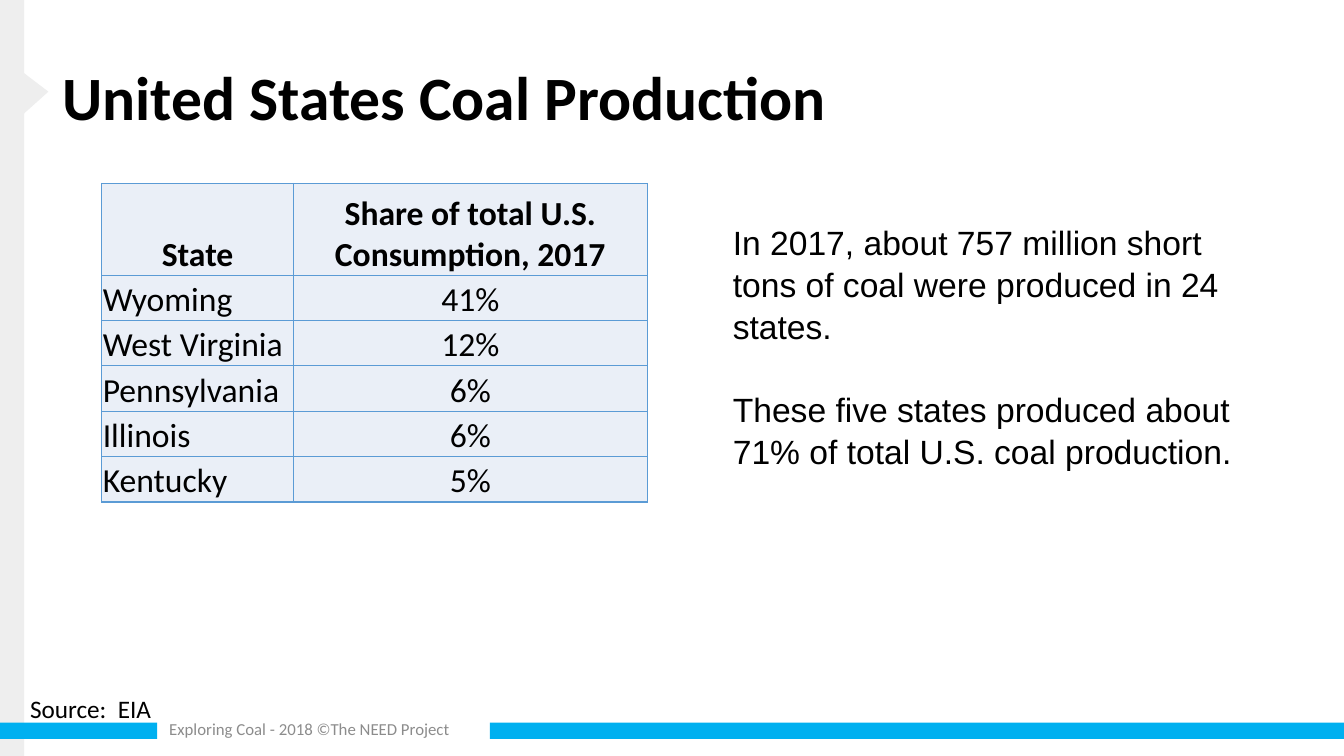
from dataclasses import dataclass

from lxml import etree
from pptx import Presentation
from pptx.dml.color import RGBColor
from pptx.enum.shapes import MSO_SHAPE
from pptx.enum.text import MSO_ANCHOR, MSO_AUTO_SIZE, PP_ALIGN
from pptx.oxml.ns import qn
from pptx.util import Emu, Pt

RECT = MSO_SHAPE.RECTANGLE
TOP, MIDDLE, BOTTOM = MSO_ANCHOR.TOP, MSO_ANCHOR.MIDDLE, MSO_ANCHOR.BOTTOM
LEFT, CENTER = PP_ALIGN.LEFT, PP_ALIGN.CENTER
FIXED = MSO_AUTO_SIZE.NONE
SCALE = 9144


@dataclass(frozen=True)
class Theme:
    black: str = "000000"
    gray: str = "8C8C8C"
    pale: str = "EEEEEE"
    blue: str = "00B0F0"
    cell: str = "EAEFF7"
    edge: str = "5B9BD5"
    sans: str = "Calibri"
    prose: str = "Arial"
    title: int = 44
    body: int = 24
    source: int = 18
    footer: int = 12
    gap: int = 29


THEME = Theme()


@dataclass(frozen=True)
class Box:
    x: int
    y: int
    w: int
    h: int

    def emu(self) -> tuple[Emu, Emu, Emu, Emu]:
        return px(self.x), px(self.y), px(self.w), px(self.h)


@dataclass(frozen=True)
class Bar:
    box: Box
    color: str


@dataclass(frozen=True)
class Style:
    size: int
    font: str = THEME.sans
    color: str = THEME.black
    bold: bool = False
    align: PP_ALIGN = LEFT
    line: float = 1.0


@dataclass(frozen=True)
class Note:
    box: Box
    lines: tuple[str, ...]
    style: Style
    anchor: MSO_ANCHOR = TOP
    wrap: bool = True


BARS = (
    Bar(Box(0, 0, 24, 750), THEME.pale),
    Bar(Box(0, 717, 156, 16), THEME.blue),
    Bar(Box(486, 717, 847, 16), THEME.blue),
)
ARROW = ((10, 62), (48, 91), (10, 125))
NOTES = (
    Note(Box(20, 683, 162, 40), ("Source:  EIA",), Style(THEME.source), wrap=False),
    Note(
        Box(158, 703, 328, 40),
        ("Exploring Coal - 2018 ©The NEED Project",),
        Style(THEME.footer, color=THEME.gray),
        MIDDLE,
    ),
    Note(
        Box(717, 214, 515, 252),
        (
            "In 2017, about 757 million short tons of coal were produced in 24 states.",
            "These five states produced about 71% of total U.S. coal production.",
        ),
        Style(THEME.body, THEME.prose, line=1.04),
    ),
)
SHARES = (
    ("State", "Share of total U.S. Consumption, 2017"),
    ("Wyoming", "41%"),
    ("West Virginia", "12%"),
    ("Pennsylvania", "6%"),
    ("Illinois", "6%"),
    ("Kentucky", "5%"),
)
GRID = Box(101, 182, 541, 316)
COLS = (190, 351)
HEAD, ROW = 91, 45


def px(n: int) -> Emu:
    return Emu(n * SCALE)


def rgb(color: str) -> RGBColor:
    return RGBColor.from_string(color)


def paint(shape, color: str) -> None:
    shape.shadow.inherit = False
    shape.fill.solid()
    shape.fill.fore_color.rgb = rgb(color)
    shape.line.fill.background()


def write(frame, lines: tuple[str, ...], style: Style) -> None:
    for i, text in enumerate(lines):
        para = frame.add_paragraph() if i else frame.paragraphs[0]
        para.text = text
        para.alignment = style.align
        para.line_spacing = style.line
        if i:
            para.space_before = Pt(THEME.gap)
        font = para.font
        font.size, font.name, font.bold = Pt(style.size), style.font, style.bold
        font.color.rgb = rgb(style.color)


def add_title(slide) -> None:
    title = slide.shapes.title
    title.left, title.top, title.width, title.height = Box(52, 41, 867, 117).emu()
    frame = title.text_frame
    frame.auto_size = FIXED
    frame.vertical_anchor = MIDDLE
    write(frame, ("United States Coal Production",), Style(THEME.title, bold=True, line=0.9))


def add_arrow(slide) -> None:
    start, *rest = ARROW
    pen = slide.shapes.build_freeform(*start, scale=SCALE)
    pen.add_line_segments(rest, close=True)
    paint(pen.convert_to_shape(), THEME.pale)


def add_note(slide, note: Note) -> None:
    frame = slide.shapes.add_textbox(*note.box.emu()).text_frame
    frame.word_wrap = note.wrap
    frame.vertical_anchor = note.anchor
    write(frame, note.lines, note.style)


def add_edges(cell) -> None:
    props = cell._tc.get_or_add_tcPr()
    for i, side in enumerate(("lnL", "lnR", "lnT", "lnB")):
        line = etree.Element(qn(f"a:{side}"), w=str(Pt(1)))
        fill = etree.SubElement(line, qn("a:solidFill"))
        etree.SubElement(fill, qn("a:srgbClr"), val=THEME.edge)
        props.insert(i, line)


def add_grid(slide) -> None:
    table = slide.shapes.add_table(len(SHARES), len(COLS), *GRID.emu()).table
    table.first_row = table.horz_banding = False
    for col, width in zip(table.columns, COLS):
        col.width = px(width)
    for r, row in enumerate(SHARES):
        table.rows[r].height = px(ROW if r else HEAD)
        for c, text in enumerate(row):
            cell = table.cell(r, c)
            cell.margin_left = cell.margin_right = cell.margin_top = px(1)
            cell.margin_bottom = 0
            cell.vertical_anchor = BOTTOM
            cell.fill.solid()
            cell.fill.fore_color.rgb = rgb(THEME.cell)
            add_edges(cell)
            align = LEFT if r and not c else CENTER
            write(cell.text_frame, (text,), Style(THEME.body, bold=r == 0, align=align))


def main() -> None:
    deck = Presentation()
    deck.slide_width, deck.slide_height = px(1333), px(750)
    slide = deck.slides.add_slide(deck.slide_layouts[5])
    for bar in BARS:
        paint(slide.shapes.add_shape(RECT, *bar.box.emu()), bar.color)
    add_arrow(slide)
    add_title(slide)
    add_grid(slide)
    for note in NOTES:
        add_note(slide, note)
    deck.save("out.pptx")


if __name__ == "__main__":
    main()
